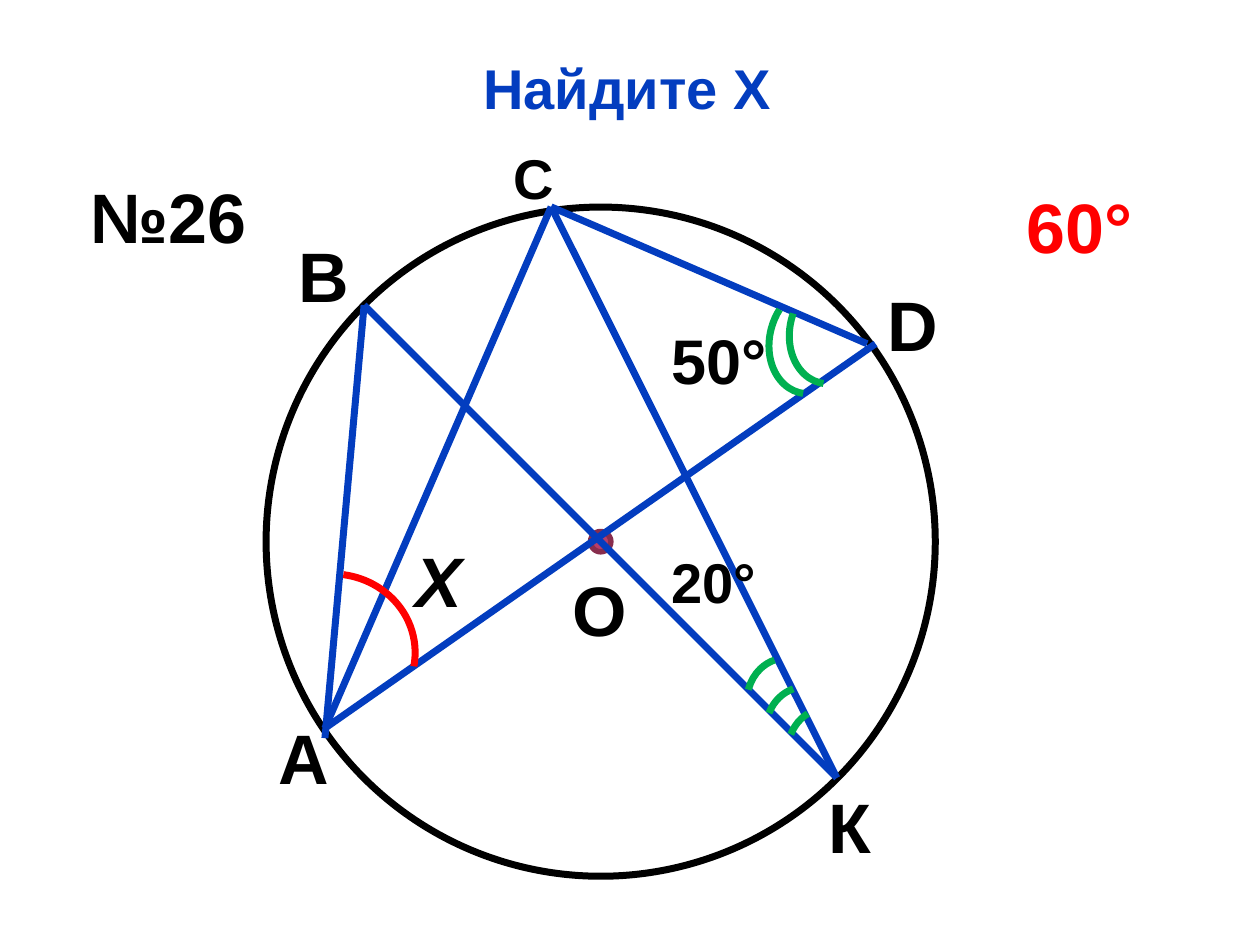
from pptx import Presentation
from pptx.dml.color import RGBColor
from pptx.enum.shapes import MSO_CONNECTOR, MSO_SHAPE
from pptx.enum.text import MSO_ANCHOR, MSO_AUTO_SIZE, PP_ALIGN
from pptx.oxml.ns import qn
from pptx.util import Cm, Pt

LINE = MSO_CONNECTOR.STRAIGHT
OVAL, ARC = MSO_SHAPE.OVAL, MSO_SHAPE.ARC
BOTTOM, CENTER = MSO_ANCHOR.BOTTOM, PP_ALIGN.CENTER
GROW = MSO_AUTO_SIZE.SHAPE_TO_FIT_TEXT

COLORS = {"blue": "033DBF", "black": "000000", "white": "FFFFFF",
          "red": "FF0000", "green": "00B050", "plum": "B83D68", "wine": "882D4D"}

# All places and sizes are in centimetres.
TITLE = ("Найдите Х", 0.58, 0.58, 24.13, 32, "blue")
HEART = (12.11, 10.92)
# diameter, fill, line, line width in points
RINGS = [(13.49, "white", "black", 4), (0.41, "plum", "wine", 3.15)]

A, B, C = (6.55, 14.68), (7.34, 6.15), (11.11, 4.17)
D, K = (17.65, 6.93), (16.87, 15.68)
CHORDS = [(A, D), (B, K), (A, C), ((6.55, 14.88), B), (K, C), (C, (17.48, 6.93))]

# colour, width, height, turn, [(left, top, start, end)]
ARCS = [
    ("green", 2.21, 1.75, 284.9, [(15.29, 5.97, 105.44, 178.22),
                                  (15.7, 5.77, 105.44, 166.17)]),
    ("green", 1.68, 1.85, 348.6, [(15.44, 13.84, 130.82, 157.99),
                                  (15.88, 14.27, 130.82, 151.92),
                                  (15.06, 13.26, 126.23, 157.99)]),
    ("red", 3.15, 3.33, 272.7, [(5.13, 11.48, 3.12, 58.33)]),
]

# text, left, top, width, size, colour
LABELS = [
    ("В", 5.77, 4.57, 1.78, 40, "black"),
    ("К", 16.46, 15.67, 1.37, 40, "black"),
    ("А", 5.36, 14.27, 2.59, 40, "black"),
    ("D", 17.65, 5.56, 3.96, 40, "black"),
    ("О", 11.3, 11.3, 2.39, 40, "black"),
    ("С", 10.11, 2.77, 1.4, 32, "black"),
    ("Х", 8.13, 10.72, 1.78, 40, "black"),
    ("50°", 13.28, 6.35, 3.18, 36, "black"),
    ("20°", 13.28, 10.92, 2.77, 32, "black"),
    ("№26", 1.57, 3.38, 3.96, 40, "black"),
    ("60°", 20.45, 3.58, 2.97, 40, "red"),
]


def color(name):
    return RGBColor.from_string(COLORS[name])


def stroke(shape, name, width=4):
    shape.line.color.rgb = color(name)
    shape.line.width = Pt(width)


def add_ring(slide, size, fill, edge, width):
    left, top = (mid - size / 2 for mid in HEART)
    ring = slide.shapes.add_shape(OVAL, Cm(left), Cm(top), Cm(size), Cm(size))
    ring.shadow.inherit = False
    ring.fill.solid()
    ring.fill.fore_color.rgb = color(fill)
    stroke(ring, edge, width)


def add_chord(slide, start, end):
    chord = slide.shapes.add_connector(LINE, *map(Cm, start + end))
    stroke(chord, "blue")
    props = chord._element.spPr
    props.append(props.makeelement(qn("a:effectLst"), {}))


def add_arc(slide, name, wide, high, turn, left, top, start, end):
    arc = slide.shapes.add_shape(ARC, Cm(left), Cm(top), Cm(wide), Cm(high))
    arc.shadow.inherit = False
    arc.fill.background()
    arc.rotation = turn
    arc.adjustments[0] = start
    arc.adjustments[1] = end
    stroke(arc, name)


def add_label(slide, text, left, top, width, size, name):
    """Add a bold one-line text box as high as its line and insets."""
    high = 0.25 + size * 0.0427
    box = slide.shapes.add_textbox(Cm(left), Cm(top), Cm(width), Cm(high))
    frame = box.text_frame
    frame.word_wrap = True
    frame.auto_size = GROW
    para = frame.paragraphs[0]
    para.text = text
    font = para.font
    font.name, font.size, font.bold = "Arial", Pt(size), True
    font.italic = text == "Х"
    font.color.rgb = color(name)
    return box


def main():
    deck = Presentation()
    deck.slide_width, deck.slide_height = Cm(25.4), Cm(19.05)
    slide = deck.slides.add_slide(deck.slide_layouts[6])

    title = add_label(slide, *TITLE)
    title.text_frame.auto_size = MSO_AUTO_SIZE.NONE
    title.height = Cm(1.98)
    title.text_frame.vertical_anchor = BOTTOM
    title.text_frame.paragraphs[0].alignment = CENTER

    for ring in RINGS:
        add_ring(slide, *ring)
    for start, end in CHORDS:
        add_chord(slide, start, end)
    for *style, spots in ARCS:
        for spot in spots:
            add_arc(slide, *style, *spot)
    for label in LABELS:
        add_label(slide, *label)
    deck.save("out.pptx")


if __name__ == "__main__":
    main()
